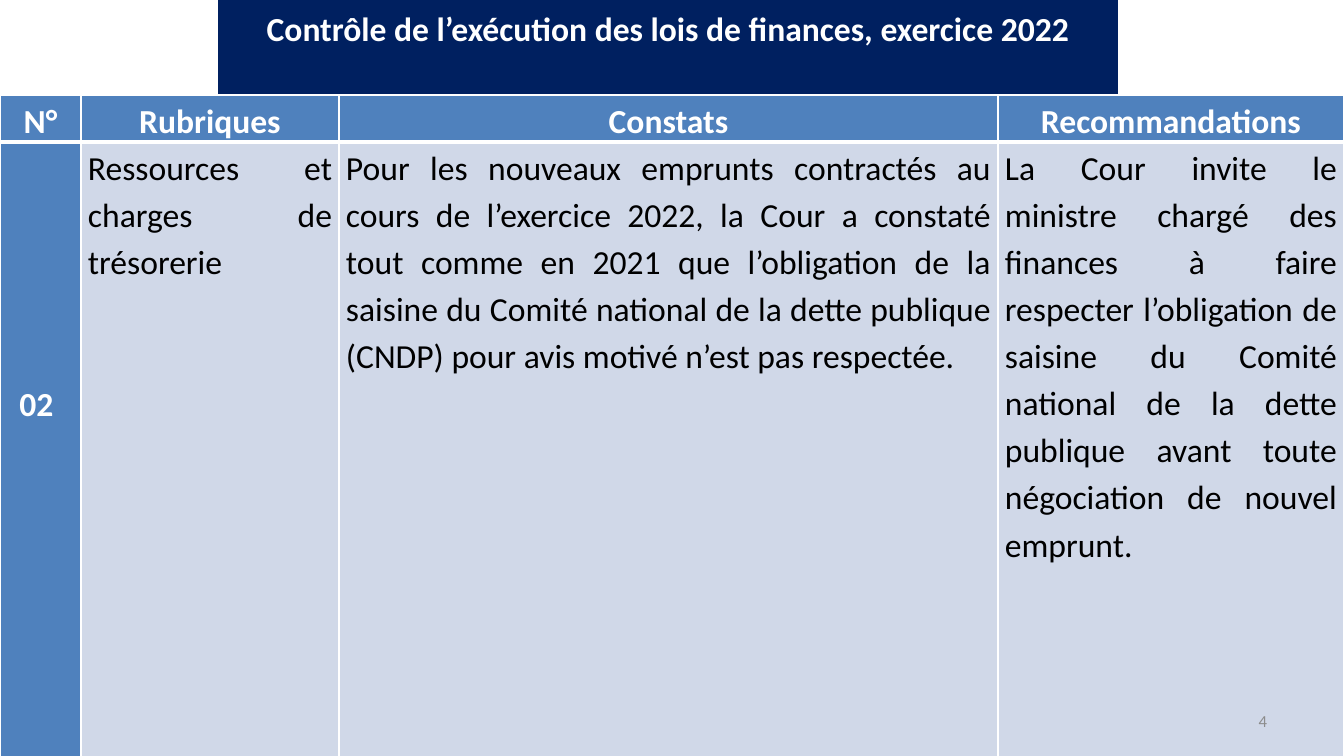
import pptx
import pptx.dml.color
import pptx.enum.shapes
import pptx.enum.text
import pptx.oxml.ns
import pptx.util
from lxml import etree

EMU_PER_PX = 914400 / 100.8
ALIGN = pptx.enum.text.PP_ALIGN
ANCHOR = pptx.enum.text.MSO_ANCHOR


class Theme:
    font = "Calibri"
    body_size, number_size = 24, 12
    line_spacing = 1.15
    navy, blue, pale = "002060", "4F81BD", "D0D8E8"
    white, black, grey = "FFFFFF", "000000", "8C8C8C"


TITLE = "Contrôle de l’exécution des lois de finances, exercice 2022"
HEADERS = ["N°", "Rubriques", "Constats", "Recommandations"]
FINDING = [
    "02",
    "Ressources et charges de trésorerie",
    "Pour les nouveaux emprunts contractés au cours de l’exercice 2022, la Cour "
    "a constaté tout comme en 2021 que l’obligation de la saisine du Comité "
    "national de la dette publique (CNDP) pour avis motivé n’est pas respectée.",
    "La Cour invite le ministre chargé des finances à faire respecter "
    "l’obligation de saisine du Comité national de la dette publique avant "
    "toute négociation de nouvel emprunt.",
]
COL_WIDTHS = [81, 258, 659, 346]
ROW_HEIGHTS = [47, 614]


def px(n):
    return pptx.util.Emu(round(n * EMU_PER_PX))


def rgb(value):
    return pptx.dml.color.RGBColor.from_string(value)


def add_text(tf, text, color, size=Theme.body_size, bold=False, align=ALIGN.CENTER):
    p = tf.paragraphs[0]
    p.alignment = align
    r = p.add_run()
    r.text = text
    r.font.name = Theme.font
    r.font.size = pptx.util.Pt(size)
    r.font.bold = bold
    r.font.color.rgb = rgb(color)
    return p


def set_borders(cell, bottom=1):
    tc_pr = cell._tc.get_or_add_tcPr()
    for side, width in (("L", 1), ("R", 1), ("T", 1), ("B", bottom)):
        ln = etree.SubElement(tc_pr, pptx.oxml.ns.qn(f"a:ln{side}"),
                              w=str(pptx.util.Pt(width)))
        fill = etree.SubElement(ln, pptx.oxml.ns.qn("a:solidFill"))
        etree.SubElement(fill, pptx.oxml.ns.qn("a:srgbClr"), val=Theme.white)


def add_banner(s, text, x, y, w, h):
    sp = s.shapes.add_shape(pptx.enum.shapes.MSO_SHAPE.RECTANGLE,
                            px(x), px(y), px(w), px(h))
    sp.shadow.inherit = False
    sp.fill.solid()
    sp.fill.fore_color.rgb = rgb(Theme.navy)
    sp.line.color.rgb = rgb(Theme.navy)
    sp.line.width = pptx.util.Pt(2)
    tf = sp.text_frame
    tf.word_wrap = True
    tf.vertical_anchor = ANCHOR.TOP
    tf.margin_top = px(8)
    add_text(tf, text, Theme.white, bold=True)


def fill_cell(cell, text, is_header, is_number):
    strong = is_header or is_number
    set_borders(cell, bottom=3 if is_header else 1)
    cell.fill.solid()
    cell.fill.fore_color.rgb = rgb(Theme.blue if strong else Theme.pale)
    cell.margin_left = cell.margin_right = px(7)
    cell.margin_top = cell.margin_bottom = 0
    cell.vertical_anchor = ANCHOR.TOP
    # The finding number sits five lines down, slightly left of centre
    if is_number and not is_header:
        cell.margin_top, cell.margin_right = px(236), px(15)
    p = add_text(cell.text_frame, text, Theme.white if strong else Theme.black,
                 bold=strong, align=ALIGN.CENTER if strong else ALIGN.JUSTIFY)
    p.line_spacing = Theme.line_spacing


def add_findings_table(s, rows, x, y):
    frame = s.shapes.add_table(len(rows), len(COL_WIDTHS), px(x), px(y),
                               px(sum(COL_WIDTHS)), px(sum(ROW_HEIGHTS)))
    table = frame.table
    for column, width in zip(table.columns, COL_WIDTHS):
        column.width = px(width)
    for i, (texts, height) in enumerate(zip(rows, ROW_HEIGHTS)):
        table.rows[i].height = px(height)
        for j, text in enumerate(texts):
            fill_cell(table.cell(i, j), text, is_header=i == 0, is_number=j == 0)


def add_page_number(s, number, x, y, w, h):
    tf = s.shapes.add_textbox(px(x), px(y), px(w), px(h)).text_frame
    tf.word_wrap = True
    tf.vertical_anchor = ANCHOR.MIDDLE
    add_text(tf, number, Theme.grey, size=Theme.number_size, align=ALIGN.RIGHT)


def main():
    prs = pptx.Presentation()
    prs.slide_width, prs.slide_height = px(1344), px(756)
    s = prs.slides.add_slide(prs.slide_layouts[6])

    # Title banner
    add_banner(s, TITLE, 219, 0, 898, 95)
    # Findings and recommendations
    add_findings_table(s, [HEADERS, FINDING], 0, 95)
    # Page number
    add_page_number(s, "4", 964, 701, 313, 40)

    prs.save("out.pptx")


if __name__ == "__main__":
    main()
